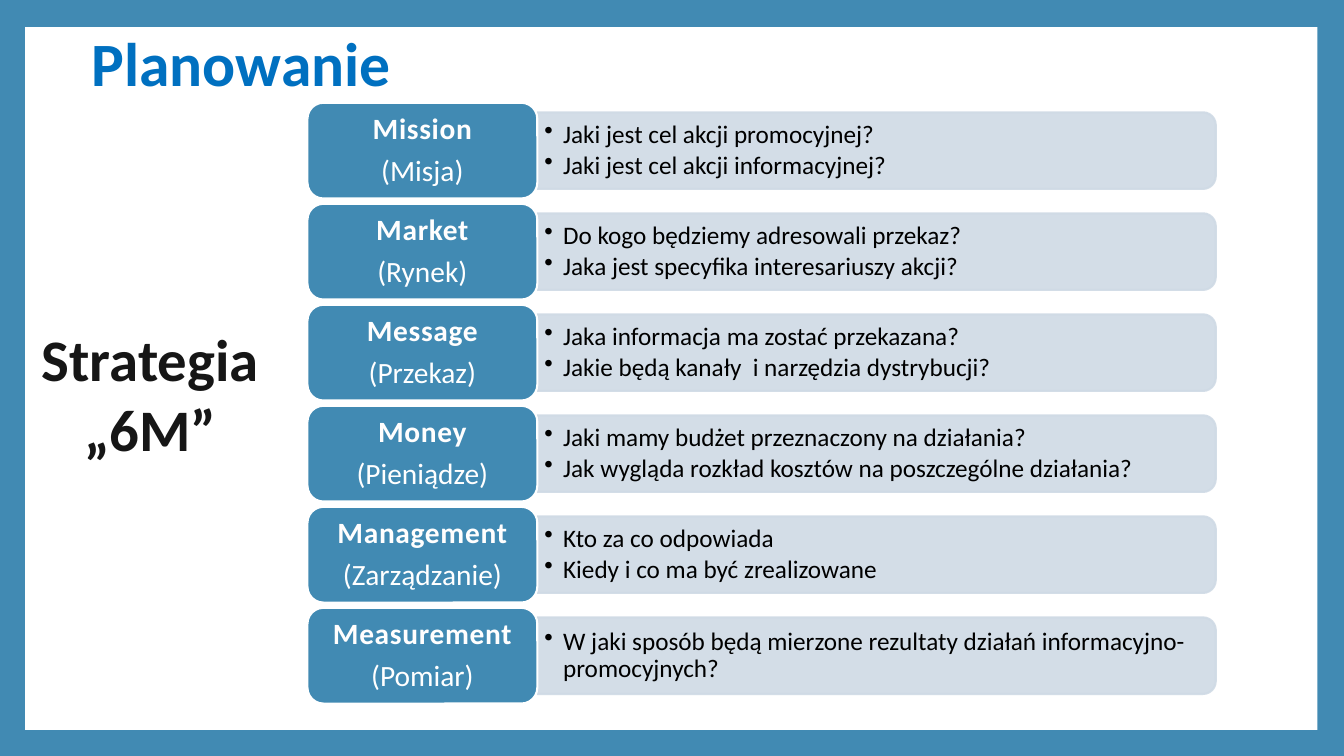
from lxml import etree
from pptx import Presentation
from pptx.dml.color import RGBColor
from pptx.enum.shapes import MSO_SHAPE
from pptx.enum.text import MSO_ANCHOR, PP_ALIGN
from pptx.oxml.ns import qn
from pptx.util import Pt

RECTANGLE = MSO_SHAPE.RECTANGLE
ROUNDED = MSO_SHAPE.ROUNDED_RECTANGLE
ROUNDED_TOP = MSO_SHAPE.ROUND_2_SAME_RECTANGLE
TOP, MIDDLE = MSO_ANCHOR.TOP, MSO_ANCHOR.MIDDLE
LEFT, CENTER = PP_ALIGN.LEFT, PP_ALIGN.CENTER

WHITE = RGBColor(0xFF, 0xFF, 0xFF)
OFF_WHITE = RGBColor(0xFF, 0xFE, 0xFE)
BLACK = RGBColor(0, 0, 0)
INK = RGBColor(0x16, 0x16, 0x16)
BLUE = RGBColor(0x41, 0x8A, 0xB3)
TITLE_BLUE = RGBColor(0x00, 0x70, 0xC0)
PALE_BLUE = RGBColor(0xCF, 0xDA, 0xE5)
GRAY = RGBColor(0x5E, 0x5E, 0x5E)
ORANGE = RGBColor(0xDB, 0x43, 0x13)

# Rows of the 6M strategy: name, translation, questions
ROWS = [
    ("Mission", "(Misja)",
     ["Jaki jest cel akcji promocyjnej?", "Jaki jest cel akcji informacyjnej?"]),
    ("Market", "(Rynek)",
     ["Do kogo będziemy adresowali przekaz?",
      "Jaka jest specyfika interesariuszy akcji?"]),
    ("Message", "(Przekaz)",
     ["Jaka informacja ma zostać przekazana?",
      "Jakie będą kanały  i narzędzia dystrybucji?"]),
    ("Money", "(Pieniądze)",
     ["Jaki mamy budżet przeznaczony na działania?",
      "Jak wygląda rozkład kosztów na poszczególne działania?"]),
    ("Management", "(Zarządzanie)",
     ["Kto za co odpowiada", "Kiedy i co ma być zrealizowane"]),
    ("Measurement", "(Pomiar)",
     ["W jaki sposób będą mierzone rezultaty działań informacyjno-promocyjnych?"]),
]
FIRST_CENTER, ROW_PITCH = 107.6, 72.15
LABEL_LEFT, LABEL_WIDTH, LABEL_HEIGHT = 219.6, 164.2, 68.4
BAR_LEFT, BAR_WIDTH, BAR_HEIGHT = 383.8, 484.6, 54.7
QUESTIONS_WIDTH, QUESTIONS_HEIGHT = 482, 49.6
BULLET_INDENT = 13.5


def add_text(frame, text, *, size, color, font="Calibri", bold=False, align=LEFT,
             line_spacing=None, space_after=None, bullet=False, spacing=0, outline=None):
    """Append one paragraph; outline is a colour and a width in points."""
    first = frame.paragraphs[0]
    paragraph = frame.add_paragraph() if first.runs else first
    paragraph.alignment = align
    if bullet:
        properties = paragraph._p.get_or_add_pPr()
        properties.set("marL", str(Pt(BULLET_INDENT)))
        properties.set("indent", str(-Pt(BULLET_INDENT)))
        etree.SubElement(properties, qn("a:buChar")).set("char", "•")
    if line_spacing:
        paragraph.line_spacing = line_spacing
    if space_after:
        paragraph.space_after = Pt(space_after)
    run = paragraph.add_run()
    run.text = text
    run.font.name, run.font.size, run.font.bold = font, Pt(size), bold
    run.font.color.rgb = color
    run_properties = run._r.get_or_add_rPr()
    if spacing:
        run_properties.set("spc", str(int(spacing * 100)))
    if outline:
        line_color, width = outline
        line = etree.Element(qn("a:ln"), w=str(Pt(width)))
        fill = etree.SubElement(line, qn("a:solidFill"))
        etree.SubElement(fill, qn("a:srgbClr")).set("val", str(line_color))
        run_properties.insert(0, line)


class SlideBuilder:
    """Holds the current slide and the shared style of its elements."""

    def __init__(self, slide, background):
        self.slide = slide
        slide.background.fill.solid()
        slide.background.fill.fore_color.rgb = background

    def shape(self, kind, left, top, width, height, fill, line=None, opacity=None):
        shape = self.slide.shapes.add_shape(kind, Pt(left), Pt(top), Pt(width), Pt(height))
        shape.shadow.inherit = False
        shape.fill.solid()
        shape.fill.fore_color.rgb = fill
        if line is None:
            shape.line.fill.background()
        else:
            shape.line.color.rgb = line
            shape.line.width = Pt(1.5)
        if opacity:
            for color in shape._element.spPr.iter(qn("a:srgbClr")):
                etree.SubElement(color, qn("a:alpha")).set("val", str(opacity * 1000))
        return shape

    def frame(self, shape, anchor, side=7.2, edge=3.6):
        frame = shape.text_frame
        frame.word_wrap = True
        frame.vertical_anchor = anchor
        frame.margin_left = frame.margin_right = Pt(side)
        frame.margin_top = frame.margin_bottom = Pt(edge)
        return frame

    def text_box(self, left, top, width, height, anchor=TOP, **margins):
        box = self.slide.shapes.add_textbox(Pt(left), Pt(top), Pt(width), Pt(height))
        return self.frame(box, anchor, **margins)

    def bar(self, center, questions):
        # Turned a quarter so that the rounded corners face right
        bar = self.shape(ROUNDED_TOP, BAR_LEFT + (BAR_WIDTH - BAR_HEIGHT) / 2,
                         center - BAR_WIDTH / 2, BAR_HEIGHT, BAR_WIDTH,
                         PALE_BLUE, PALE_BLUE, opacity=90)
        bar.rotation = 90
        frame = self.text_box(BAR_LEFT, center - QUESTIONS_HEIGHT / 2, QUESTIONS_WIDTH,
                              QUESTIONS_HEIGHT, MIDDLE, side=5, edge=2.7)
        for question in questions:
            add_text(frame, question, size=18, color=BLACK, bullet=True,
                     line_spacing=0.9, space_after=2.7)

    def label(self, center, name, translation):
        label = self.shape(ROUNDED, LABEL_LEFT, center - LABEL_HEIGHT / 2,
                           LABEL_WIDTH, LABEL_HEIGHT, BLUE, WHITE)
        frame = self.frame(label, MIDDLE, side=6.3, edge=3.15)
        style = {"size": 21, "align": CENTER, "line_spacing": 0.9, "space_after": 7.35}
        add_text(frame, name, color=OFF_WHITE, bold=True, spacing=0.5,
                 outline=(ORANGE, 1), **style)
        add_text(frame, translation, color=WHITE, **style)


def main():
    presentation = Presentation()
    presentation.slide_width, presentation.slide_height = Pt(960), Pt(540)
    slide = presentation.slides.add_slide(presentation.slide_layouts[6])
    builder = SlideBuilder(slide, BLUE)

    # White panel inside the blue frame
    builder.shape(RECTANGLE, 18, 19.4, 923, 502, WHITE)

    # Title
    add_text(builder.text_box(10.8, 14.4, 323.3, 67), "Planowanie", size=44,
             color=TITLE_BLUE, bold=True, align=CENTER, outline=(GRAY, 1))

    # Strategy rows
    for index, (name, translation, questions) in enumerate(ROWS):
        center = FIRST_CENTER + index * ROW_PITCH
        builder.bar(center, questions)
        builder.label(center, name, translation)

    # Side heading
    heading = builder.text_box(20.2, 226.8, 174.2, 122.4)
    for line in ("Strategia", "„6M”"):
        add_text(heading, line, size=42, color=INK, bold=True, align=CENTER,
                 outline=(BLACK, 1.75))

    presentation.save("out.pptx")


if __name__ == "__main__":
    main()
